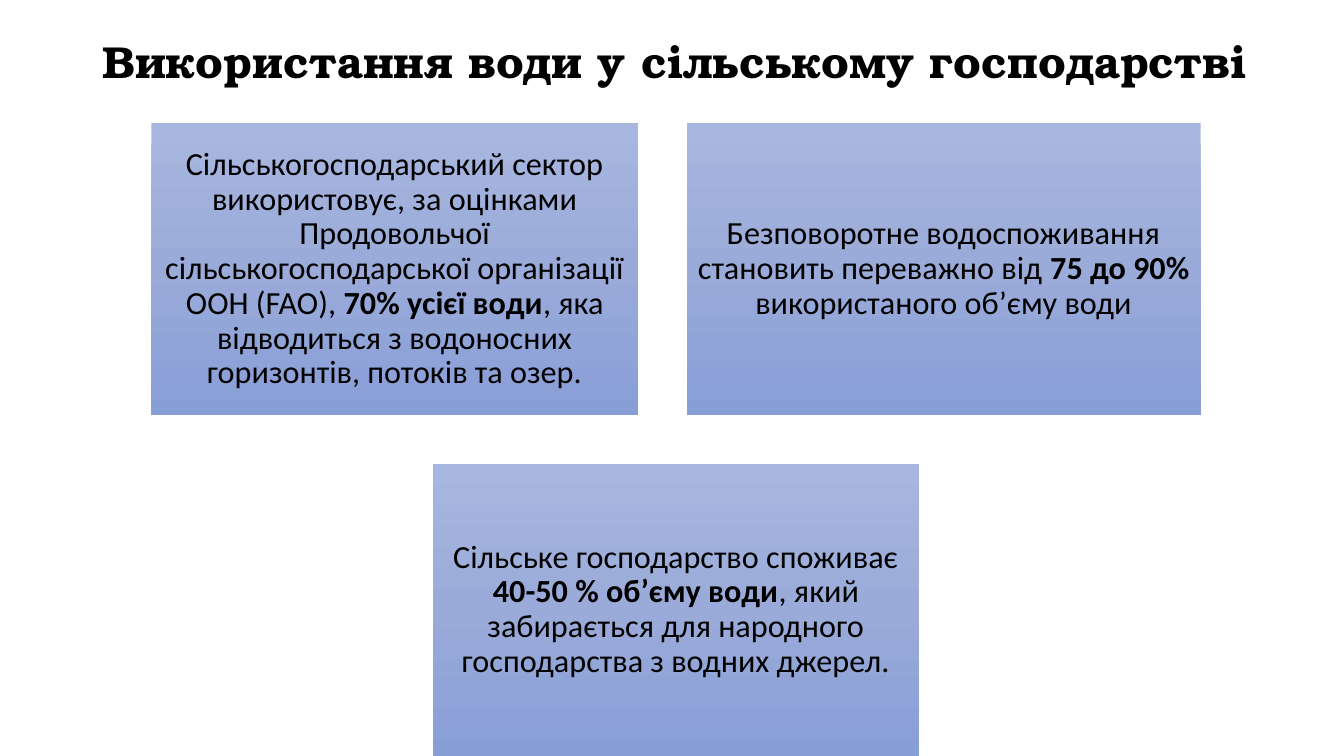
from copy import deepcopy
from pptx import Presentation
from pptx.dml.color import RGBColor
from pptx.enum.shapes import MSO_SHAPE
from pptx.enum.text import MSO_ANCHOR, MSO_AUTO_SIZE, PP_ALIGN
from pptx.oxml.ns import qn
from pptx.util import Inches, Pt

WIDTH, HEIGHT = Inches(13.33), Inches(7.5)

# Places in percent of the slide's width or height
MID, TOP, HIGH = 50.3, 16.27, 38.67
GAP_X, GAP_Y = 3.6, 6.4
SLIM, WIDE = 36.23, 38.25

TITLE = "Використання води у сільському господарстві"

# Rows of cards: width, then text before, in and after the bold part
ROWS = [
    [
        (SLIM, "Сільськогосподарський сектор використовує, за оцінками Продовольчої "
               "сільськогосподарської організації ООН (FAO), ",
         "70% усієї води",
         ", яка відводиться з водоносних горизонтів, потоків та озер."),
        (WIDE, "Безповоротне водоспоживання становить переважно від ",
         "75 до 90% ", "використаного об’єму води"),
    ],
    [
        (SLIM, "Сільське господарство споживає ", "40-50 % об’єму води",
         ", який забирається для народного господарства з водних джерел."),
    ],
]


def color(code):
    return RGBColor.from_string(code)


class Page:
    head = {"name": "TeX Gyre Bonum", "size": Pt(32), "bold": True}
    body = {"name": "Calibri", "size": Pt(23), "bold": False}
    ink = "000000"
    shades = ["A8B7DF", "9AABD9", "889ED7"]
    frame = {"word_wrap": True, "auto_size": MSO_AUTO_SIZE.NONE,
             "vertical_anchor": MSO_ANCHOR.MIDDLE}

    def __init__(self, slide):
        self.slide = slide

    def box(self, left, top, wide, high):
        """Turn percents of the slide into lengths."""
        return (int(WIDTH * left / 100), int(HEIGHT * top / 100),
                int(WIDTH * wide / 100), int(HEIGHT * high / 100))

    def label(self, shape, parts, align, **inset):
        text = shape.text_frame
        for key, value in {**self.frame, **inset}.items():
            setattr(text, key, value)
        para = text.paragraphs[0]
        para.alignment, para.line_spacing = align, 0.9
        for words, style in parts:
            run = para.add_run()
            run.text = words
            for key, value in style.items():
                setattr(run.font, key, value)
            run.font.color.rgb = color(self.ink)

    def title(self, words, *place):
        shape = self.slide.shapes.title
        shape.left, shape.top, shape.width, shape.height = self.box(*place)
        self.label(shape, [(words, self.head)], PP_ALIGN.LEFT)

    def shade(self, shape):
        """Fill from top to bottom with three shades."""
        fill = shape.fill
        fill.gradient()
        fill.gradient_angle = 270
        stops = shape.element.spPr.find(qn("a:gradFill")).find(qn("a:gsLst"))
        stops.insert(1, deepcopy(stops[0]))
        for spot, (stop, code) in enumerate(zip(fill.gradient_stops, self.shades)):
            stop.position = spot / 2
            stop.color.rgb = color(code)

    def card(self, place, before, bold, after):
        shape = self.slide.shapes.add_shape(MSO_SHAPE.RECTANGLE, *self.box(*place))
        shape.shadow.inherit = False
        shape.line.fill.background()
        self.shade(shape)
        strong = {**self.body, "bold": True}
        parts = [(before, self.body), (bold, strong), (after, self.body)]
        pad = Inches(0.1)
        self.label(shape, parts, PP_ALIGN.CENTER, margin_left=pad,
                   margin_right=pad, margin_top=pad, margin_bottom=pad)

    def row(self, top, cards):
        """Set cards side by side, centred on the middle line."""
        total = sum(card[0] for card in cards) + GAP_X * (len(cards) - 1)
        left = MID - total / 2
        for wide, *words in cards:
            self.card((left, top, wide, HIGH), *words)
            left += wide + GAP_X


def main():
    deck = Presentation()
    deck.slide_width, deck.slide_height = WIDTH, HEIGHT
    page = Page(deck.slides.add_slide(deck.slide_layouts[5]))

    # Title
    page.title(TITLE, 6.9, 0, 90.85, 16.8)

    # Cards
    for line, cards in enumerate(ROWS):
        page.row(TOP + line * (HIGH + GAP_Y), cards)

    deck.save("out.pptx")


if __name__ == "__main__":
    main()
